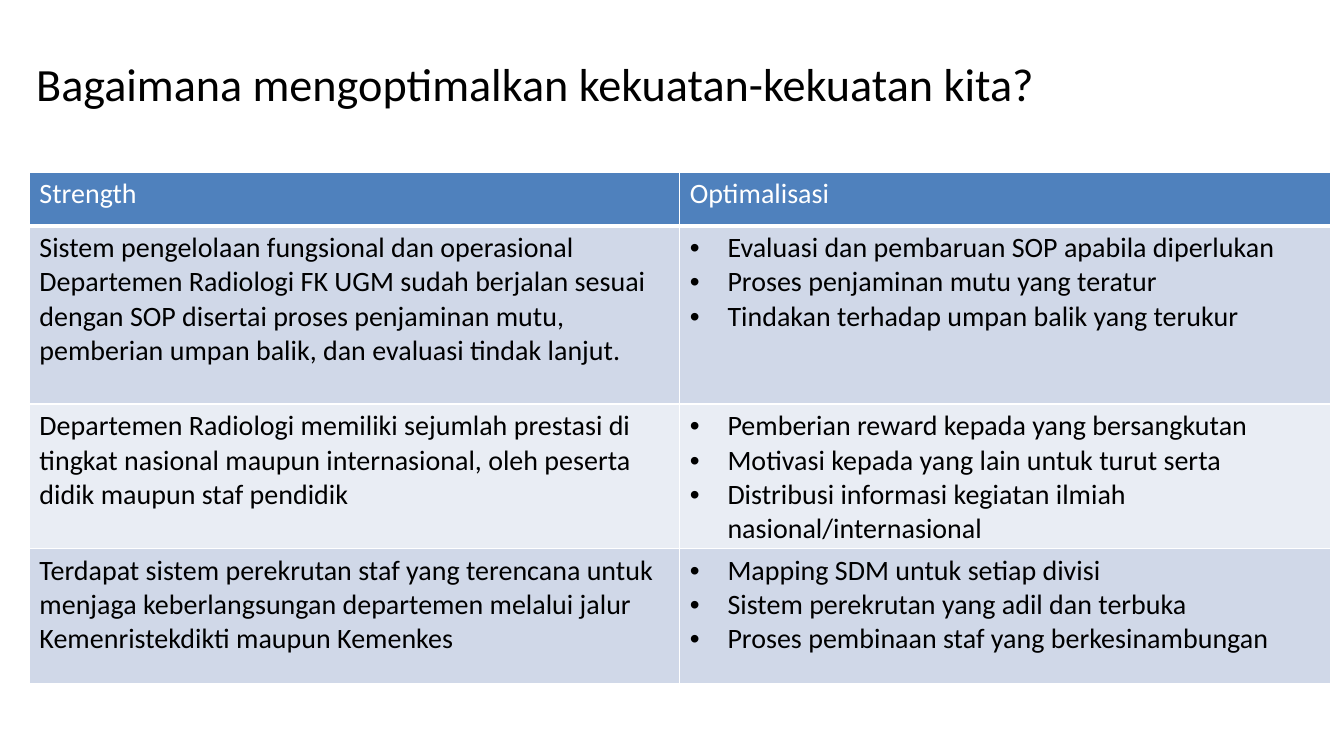
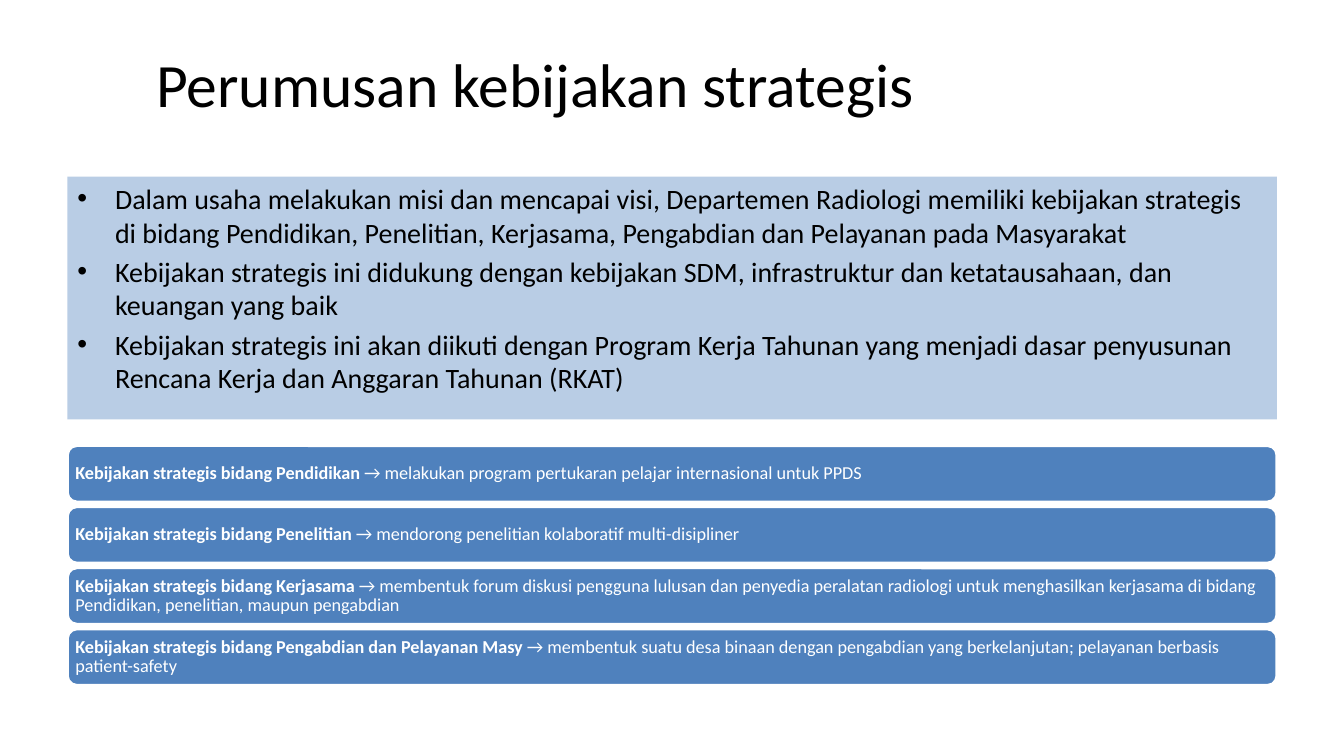
import pptx
import pptx.dml.color
import pptx.enum.shapes
import pptx.enum.text
import pptx.oxml
import pptx.oxml.ns
import pptx.util
from pptx.util import Cm

COLORS = {
    "ink": "000000",
    "white": "FFFFFF",
    "blue": "4F81BD",
    "panel": "B9CDE5",
    "odd_row": "D0D8E8",
    "even_row": "E9EDF4",
}
FONT = "Calibri"
BODY_SIZE = 20
BULLET_INDENT = Cm(0.95)

STRENGTHS = [
    (
        "Sistem pengelolaan fungsional dan operasional Departemen Radiologi FK UGM sudah berjalan "
        "sesuai dengan SOP disertai proses penjaminan mutu, pemberian umpan balik, dan evaluasi "
        "tindak lanjut.",
        [
            "Evaluasi dan pembaruan SOP apabila diperlukan",
            "Proses penjaminan mutu yang teratur",
            "Tindakan terhadap umpan balik yang terukur",
        ],
    ),
    (
        "Departemen Radiologi memiliki sejumlah prestasi di tingkat nasional maupun internasional, "
        "oleh peserta didik maupun staf pendidik",
        [
            "Pemberian reward kepada yang bersangkutan",
            "Motivasi kepada yang lain untuk turut serta",
            "Distribusi informasi kegiatan ilmiah nasional/internasional",
        ],
    ),
    (
        "Terdapat sistem perekrutan staf yang terencana untuk menjaga keberlangsungan departemen "
        "melalui jalur Kemenristekdikti maupun Kemenkes",
        [
            "Mapping SDM untuk setiap divisi",
            "Sistem perekrutan yang adil dan terbuka",
            "Proses pembinaan staf yang berkesinambungan",
        ],
    ),
]

PRINCIPLES = [
    "Dalam usaha melakukan misi dan mencapai visi, Departemen Radiologi memiliki kebijakan strategis "
    "di bidang Pendidikan, Penelitian, Kerjasama, Pengabdian dan Pelayanan pada Masyarakat",
    "Kebijakan strategis ini didukung dengan kebijakan SDM, infrastruktur dan ketatausahaan, dan "
    "keuangan yang baik",
    "Kebijakan strategis ini akan diikuti dengan Program Kerja Tahunan yang menjadi dasar penyusunan "
    "Rencana Kerja dan Anggaran Tahunan (RKAT)",
]

POLICIES = [
    ("Pendidikan", "melakukan program pertukaran pelajar internasional untuk PPDS"),
    ("Penelitian", "mendorong penelitian kolaboratif multi-disipliner"),
    (
        "Kerjasama",
        "membentuk forum diskusi pengguna lulusan dan penyedia peralatan radiologi untuk "
        "menghasilkan kerjasama di bidang Pendidikan, penelitian, maupun pengabdian",
    ),
    (
        "Pengabdian dan Pelayanan Masy",
        "membentuk suatu desa binaan dengan pengabdian yang berkelanjutan; pelayanan berbasis "
        "patient-safety",
    ),
]


def rgb(color):
    return pptx.dml.color.RGBColor.from_string(COLORS[color])


class Deck:
    def __init__(self):
        self.presentation = pptx.Presentation()
        self.presentation.slide_width = Cm(33.87)
        self.presentation.slide_height = Cm(19.05)
        self.slide = None

    def new_slide(self, title, size):
        self.slide = self.presentation.slides.add_slide(self.presentation.slide_layouts[6])
        heading = self.slide.shapes.add_textbox(Cm(0.46), Cm(0.79), Cm(26.06), Cm(2.62))
        frame = heading.text_frame
        frame.word_wrap = True
        frame.vertical_anchor = pptx.enum.text.MSO_ANCHOR.MIDDLE
        frame.text = title
        frame.paragraphs[0].alignment = pptx.enum.text.PP_ALIGN.CENTER
        self.style(frame, size, "ink")

    def style(self, frame, size, color):
        for paragraph in frame.paragraphs:
            for run in paragraph.runs:
                run.font.name = FONT
                run.font.size = pptx.util.Pt(size)
                run.font.bold = False
                run.font.color.rgb = rgb(color)

    def bullets(self, frame, items, gap=0):
        frame.text = "\n".join(items)
        for index, paragraph in enumerate(frame.paragraphs):
            properties = paragraph._p.get_or_add_pPr()
            properties.set("marL", str(BULLET_INDENT))
            properties.set("indent", str(-BULLET_INDENT))
            for tag, key, value in (("buFont", "typeface", "Arial"), ("buChar", "char", "•")):
                bullet = pptx.oxml.parse_xml(f'<a:{tag} {pptx.oxml.ns.nsdecls("a")} {key}="{value}"/>')
                properties.append(bullet)
            paragraph.alignment = pptx.enum.text.PP_ALIGN.LEFT
            if index and gap:
                paragraph.space_before = pptx.util.Pt(gap)
        self.style(frame, BODY_SIZE, "ink")

    def box(self, kind, left, top, width, height, fill):
        shape = self.slide.shapes.add_shape(kind, left, top, width, height)
        shape.shadow.inherit = False
        shape.fill.solid()
        shape.fill.fore_color.rgb = rgb(fill)
        shape.line.fill.background()
        shape.text_frame.word_wrap = True
        return shape

    def panel(self, left, top, width, height, items):
        panel = self.box(pptx.enum.shapes.MSO_SHAPE.RECTANGLE, left, top, width, height, "panel")
        panel.text_frame.vertical_anchor = pptx.enum.text.MSO_ANCHOR.TOP
        self.bullets(panel.text_frame, items, gap=4)

    def policy_bar(self, left, top, width, height, field, action):
        bar = self.box(pptx.enum.shapes.MSO_SHAPE.ROUNDED_RECTANGLE, left, top, width, height, "blue")
        bar.line.color.rgb = rgb("white")
        bar.line.width = pptx.util.Pt(2)
        frame = bar.text_frame
        frame.margin_left = frame.margin_right = frame.margin_top = frame.margin_bottom = Cm(0.13)
        frame.vertical_anchor = pptx.enum.text.MSO_ANCHOR.MIDDLE
        frame.text = f"Kebijakan strategis bidang {field} "
        paragraph = frame.paragraphs[0]
        paragraph.alignment = pptx.enum.text.PP_ALIGN.LEFT
        paragraph.line_spacing = 0.9
        paragraph.add_run().text = f"→ {action}"
        self.style(frame, 13, "white")
        paragraph.runs[0].font.bold = True

    def finish_cell(self, cell, fill, top=1, bottom=1):
        cell.fill.solid()
        cell.fill.fore_color.rgb = rgb(fill)
        properties = cell._tc.get_or_add_tcPr()
        sides = (("L", 1), ("R", 1), ("T", top), ("B", bottom))
        for index, (side, points) in enumerate(sides):
            border = pptx.oxml.parse_xml(
                f'<a:ln{side} {pptx.oxml.ns.nsdecls("a")} w="{pptx.util.Pt(points)}">'
                f'<a:solidFill><a:srgbClr val="{COLORS["white"]}"/></a:solidFill></a:ln{side}>'
            )
            properties.insert(index, border)

    def strength_table(self, left, top, width, heights, headers, rows):
        table = self.slide.shapes.add_table(
            len(heights), len(headers), left, top, width, sum(heights)
        ).table
        for row, height in zip(table.rows, heights):
            row.height = height
        for column, header in enumerate(headers):
            cell = table.cell(0, column)
            cell.text_frame.text = header
            self.style(cell.text_frame, BODY_SIZE, "white")
            self.finish_cell(cell, "blue", bottom=3)
        for number, (strength, actions) in enumerate(rows, start=1):
            strength_cell, action_cell = table.cell(number, 0), table.cell(number, 1)
            strength_cell.text_frame.text = strength
            self.style(strength_cell.text_frame, BODY_SIZE, "ink")
            self.bullets(action_cell.text_frame, actions)
            fill = "odd_row" if number % 2 else "even_row"
            for cell in (strength_cell, action_cell):
                self.finish_cell(cell, fill, top=3 if number == 1 else 1)


def main():
    deck = Deck()

    deck.new_slide("Bagaimana mengoptimalkan kekuatan-kekuatan kita?", 33)
    row_heights = [Cm(1.35), Cm(4.49), Cm(3.4), Cm(3.4)]
    deck.strength_table(
        Cm(0.74), Cm(4.34), Cm(32.78), row_heights, ["Strength", "Optimalisasi"], STRENGTHS
    )

    deck.new_slide("Perumusan kebijakan strategis", 44)
    left, width = Cm(1.7), Cm(30.48)
    deck.panel(left, Cm(4.45), width, Cm(6.12), PRINCIPLES)
    for index, (field, action) in enumerate(POLICIES):
        top = Cm(11.23) + index * Cm(1.54)
        deck.policy_bar(left, top, width, Cm(1.42), field, action)

    deck.presentation.save("out.pptx")


if __name__ == "__main__":
    main()
